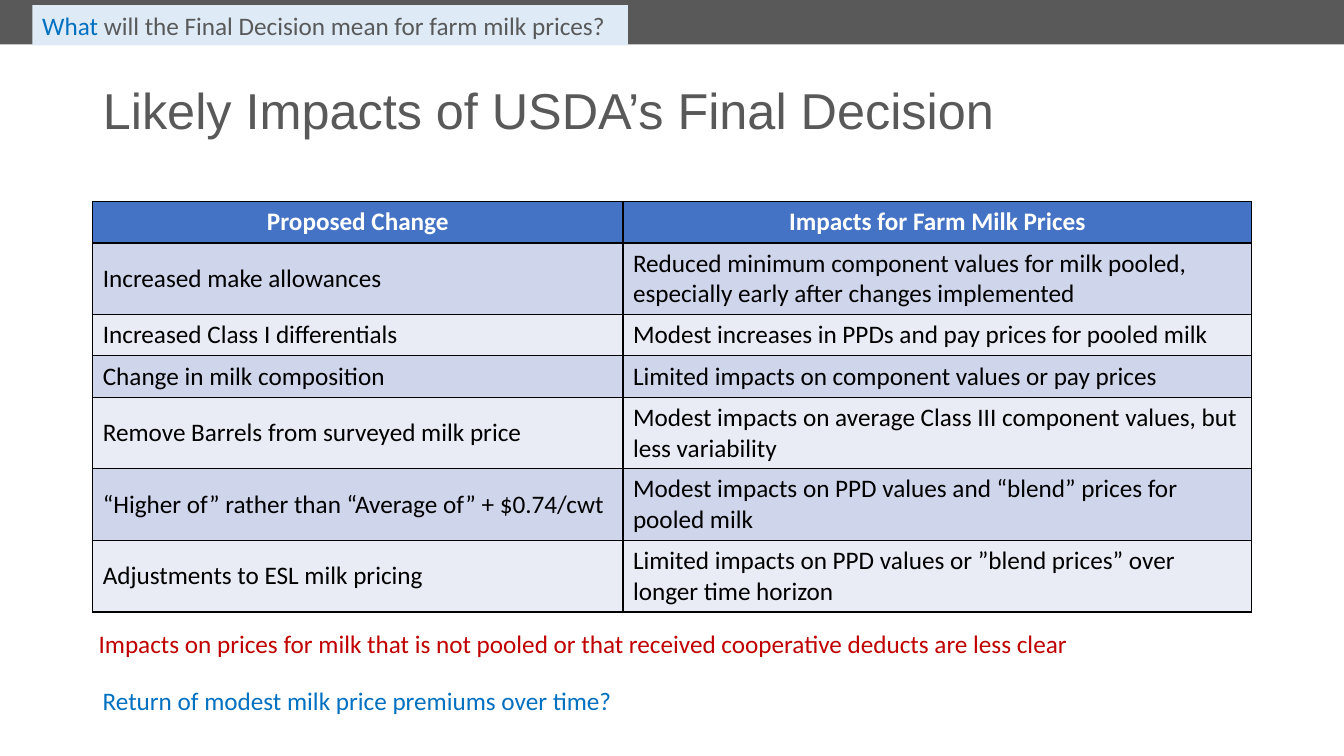
import pptx
import pptx.util
import pptx.dml.color
import pptx.enum.shapes
import pptx.enum.text
import pptx.oxml
import pptx.oxml.ns

RGBColor = pptx.dml.color.RGBColor
Align = pptx.enum.text.PP_ALIGN
Anchor = pptx.enum.text.MSO_ANCHOR

PX = 9144  # 100 px to the inch
GREY = RGBColor(0x59, 0x59, 0x59)
WHITE = RGBColor(0xFF, 0xFF, 0xFF)
BLACK = RGBColor(0, 0, 0)
HEADER_BLUE = RGBColor(0x44, 0x72, 0xC4)
BAND_DARK = RGBColor(0xCF, 0xD5, 0xEA)
BAND_LIGHT = RGBColor(0xE9, 0xEB, 0xF5)
TAB_BLUE = RGBColor(0xDE, 0xEB, 0xF7)
RED = RGBColor(0xC0, 0, 0)
BLUE = RGBColor(0, 0x70, 0xC0)


def set_font(font, color, size=18, name="Calibri", bold=False):
    font.name = name
    font.size = pptx.util.Pt(size)
    font.bold = bold
    font.color.rgb = color


def add_line_box(page, left, top, width, spans):
    """Add a one-line text box; spans are (text, colour) pairs."""
    box = page.shapes.add_textbox(left * PX, top * PX, width * PX, 40 * PX)
    box.text_frame.word_wrap = False
    box.text_frame.auto_size = pptx.enum.text.MSO_AUTO_SIZE.SHAPE_TO_FIT_TEXT
    for text, color in spans:
        span = box.text_frame.paragraphs[0].add_run()
        span.text = text
        set_font(span.font, color)
    return box


deck = pptx.Presentation()
deck.slide_width = pptx.util.Emu(12192000)
deck.slide_height = 750 * PX
page = deck.slides.add_slide(deck.slide_layouts[5])

# Top bar
bar = page.shapes.add_shape(
    pptx.enum.shapes.MSO_SHAPE.RECTANGLE, 0, 0, deck.slide_width, 44 * PX)
bar.shadow.inherit = False
bar.fill.solid()
bar.fill.fore_color.rgb = GREY
bar.line.fill.background()

# Title
title = page.shapes.title
title.left, title.top, title.width, title.height = (
    92 * PX, 40 * PX, 1150 * PX, 145 * PX)
title.text_frame.text = "Likely Impacts of USDA’s Final Decision"
title.text_frame.vertical_anchor = Anchor.MIDDLE
title.text_frame.auto_size = pptx.enum.text.MSO_AUTO_SIZE.NONE
para = title.text_frame.paragraphs[0]
para.alignment = Align.LEFT
para.line_spacing = 0.9
set_font(para.font, GREY, 36, "Arial")

# Table of changes and impacts
rows = [
    ("Proposed Change", "Impacts for Farm Milk Prices"),
    ("Increased make allowances",
     "Reduced minimum component values for milk pooled, "
     "especially early after changes implemented"),
    ("Increased Class I differentials",
     "Modest increases in PPDs and pay prices for pooled milk"),
    ("Change in milk composition",
     "Limited impacts on component values or pay prices"),
    ("Remove Barrels from surveyed milk price",
     "Modest impacts on average Class III component values, "
     "but less variability"),
    ("“Higher of” rather than “Average of” + $0.74/cwt",
     "Modest impacts on PPD values and “blend” prices for pooled milk"),
    ("Adjustments to ESL milk pricing",
     "Limited impacts on PPD values or ”blend prices” "
     "over longer time horizon"),
]
row_heights = [41, 71, 41, 41, 71, 71, 71]
table = page.shapes.add_table(
    len(rows), 2, 92 * PX, 200 * PX, 1150 * PX, sum(row_heights) * PX).table
for column, width in zip(table.columns, (526, 624)):
    column.width = width * PX

for r, texts in enumerate(rows):
    table.rows[r].height = row_heights[r] * PX
    header = r == 0
    fill = HEADER_BLUE if header else BAND_DARK if r % 2 else BAND_LIGHT
    for c, text in enumerate(texts):
        cell = table.cell(r, c)
        cell.text = text
        cell.vertical_anchor = Anchor.MIDDLE
        para = cell.text_frame.paragraphs[0]
        para.alignment = Align.CENTER if header else Align.LEFT
        set_font(para.font, WHITE if header else BLACK, bold=header)
        # Borders come before the fill in the cell properties
        properties = cell._tc.get_or_add_tcPr()
        for side in ("lnL", "lnR", "lnT", "lnB"):
            properties.append(pptx.oxml.parse_xml(
                f'<a:{side} {pptx.oxml.ns.nsdecls("a")} w="12700">'
                '<a:solidFill><a:srgbClr val="000000"/></a:solidFill>'
                f'</a:{side}>'))
        cell.fill.solid()
        cell.fill.fore_color.rgb = fill

# Remarks below the table
add_line_box(page, 88, 618, 987, [
    ("Impacts on prices for milk that is not pooled or that received "
     "cooperative deducts are less clear", RED)])
add_line_box(page, 92, 675, 531, [
    ("Return of modest milk price premiums over time?", BLUE)])

# Section tab on the top bar
tab = add_line_box(page, 32, 5, 591, [
    ("What ", BLUE),
    ("will the Final Decision mean for farm milk prices?", GREY)])
tab.fill.solid()
tab.fill.fore_color.rgb = TAB_BLUE

deck.save("out.pptx")
